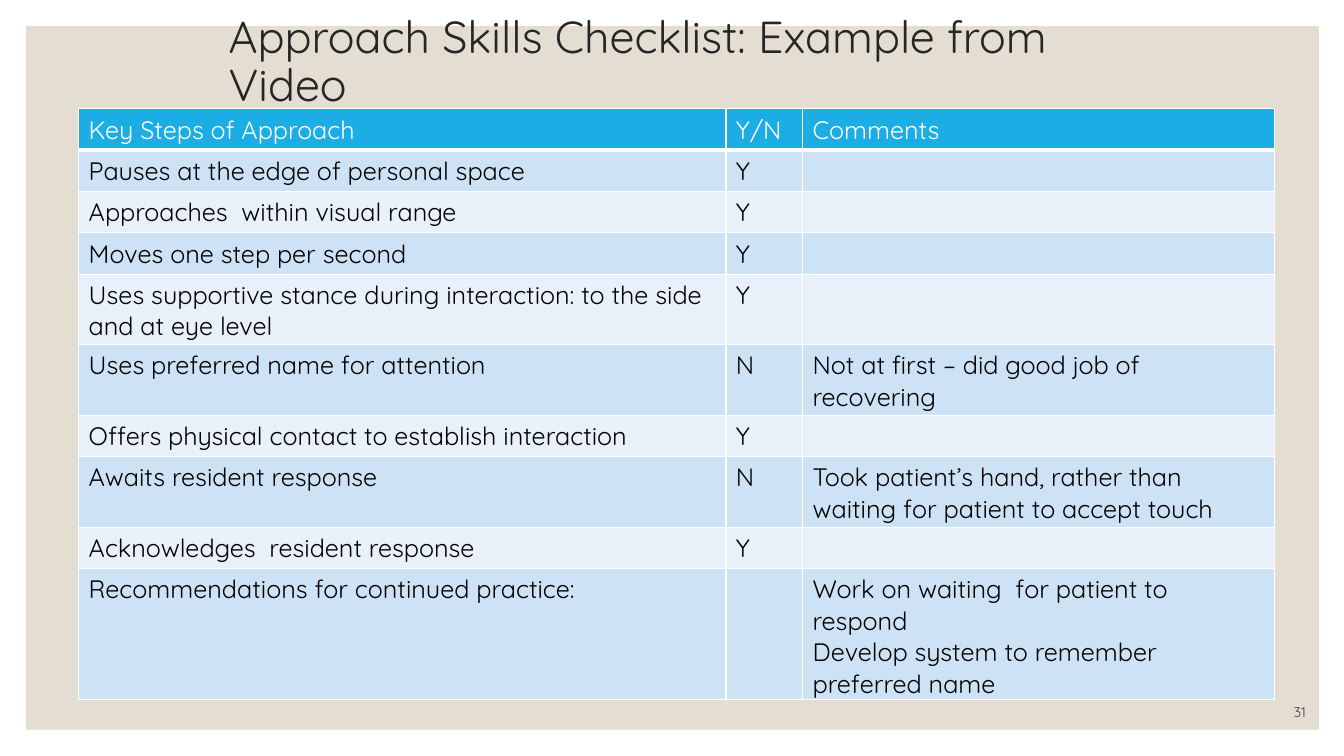
from dataclasses import dataclass

from lxml import etree
from pptx import Presentation
from pptx.dml.color import RGBColor
from pptx.enum.shapes import MSO_SHAPE
from pptx.enum.text import MSO_ANCHOR, PP_ALIGN
from pptx.oxml.ns import qn
from pptx.util import Pt

RECTANGLE = MSO_SHAPE.RECTANGLE
MIDDLE, BOTTOM = MSO_ANCHOR.MIDDLE, MSO_ANCHOR.BOTTOM
LEFT, RIGHT = PP_ALIGN.LEFT, PP_ALIGN.RIGHT

TITLE = "Approach Skills Checklist: Example from Video"
PAGE_NUMBER = "31"
HEADER = ("Key Steps of Approach", "Y/N", ["Comments"])
STEPS = [
    ("Pauses at the edge of personal space", "Y", []),
    ("Approaches  within visual range", "Y", []),
    ("Moves one step per second", "Y", []),
    ("Uses supportive stance during interaction: to the side and at eye level", "Y", []),
    ("Uses preferred name for attention", "N", ["Not at first – did good job of recovering"]),
    ("Offers physical contact to establish interaction", "Y", []),
    ("Awaits resident response", "N",
     ["Took patient’s hand, rather than waiting for patient to accept touch"]),
    ("Acknowledges  resident response", "Y", []),
    ("Recommendations for continued practice:", "",
     ["Work on waiting  for patient to respond",
      "Develop system to remember preferred name"]),
]

EMU_PER_PX = 9144
SLIDE_SIZE = (1333, 750)
PANEL = (26, 26, 1282, 698)
TITLE_BOX = (217, 0, 900, 125)
NUMBER_BOX = (1145, 690, 160, 30)
TABLE_ORIGIN = (78, 108)
COLUMN_WIDTHS = (642, 76, 468)
ROW_HEIGHT = 41


@dataclass(frozen=True)
class Theme:
    font: str = "Quicksand"
    panel: str = "E3DED1"
    title: str = "262626"
    number: str = "404040"
    header: str = "1CADE4"
    header_text: str = "FFFFFF"
    body_text: str = "000000"
    bands: tuple = ("CDE3F5", "E8F1FA")
    border: str = "FFFFFF"
    title_size: int = 32
    table_size: int = 18
    number_size: int = 10
    thin: int = 1
    thick: int = 3


THEME = Theme()


def px(*lengths):
    return [length * EMU_PER_PX for length in lengths]


def add_run(paragraph, text, size, color):
    run = paragraph.add_run()
    run.text = text
    run.font.name = THEME.font
    run.font.size = Pt(size)
    run.font.color.rgb = RGBColor.from_string(color)


def add_text_box(slide, box, text, size, color, anchor, alignment, line_spacing):
    frame = slide.shapes.add_textbox(*px(*box)).text_frame
    frame.word_wrap = True
    frame.vertical_anchor = anchor
    paragraph = frame.paragraphs[0]
    paragraph.alignment = alignment
    paragraph.line_spacing = line_spacing
    add_run(paragraph, text, size, color)


def set_borders(cell, widths):
    properties = cell._tc.get_or_add_tcPr()
    for position, (side, width) in enumerate(widths.items()):
        line = etree.Element(qn(f"a:ln{side}"), w=str(Pt(width)))
        fill = etree.SubElement(line, qn("a:solidFill"))
        etree.SubElement(fill, qn("a:srgbClr"), val=THEME.border)
        properties.insert(position, line)


def fill_cell(cell, lines, row_index):
    is_header = row_index == 0
    background = THEME.header if is_header else THEME.bands[(row_index - 1) % 2]
    color = THEME.header_text if is_header else THEME.body_text
    cell.fill.solid()
    cell.fill.fore_color.rgb = RGBColor.from_string(background)
    set_borders(cell, {
        "L": THEME.thin,
        "R": THEME.thin,
        "T": THEME.thick if row_index == 1 else THEME.thin,
        "B": THEME.thick if is_header else THEME.thin,
    })
    frame = cell.text_frame
    for index, line in enumerate(lines):
        paragraph = frame.add_paragraph() if index else frame.paragraphs[0]
        add_run(paragraph, line, THEME.table_size, color)


def add_checklist(slide):
    rows = [HEADER, *STEPS]
    size = (sum(COLUMN_WIDTHS), ROW_HEIGHT * len(rows))
    table = slide.shapes.add_table(
        len(rows), len(COLUMN_WIDTHS), *px(*TABLE_ORIGIN, *size)).table
    for column, width in zip(table.columns, px(*COLUMN_WIDTHS)):
        column.width = width
    for row_index, (step, answer, comments) in enumerate(rows):
        for column_index, lines in enumerate(([step], [answer] if answer else [], comments)):
            fill_cell(table.cell(row_index, column_index), lines, row_index)


def main():
    presentation = Presentation()
    presentation.slide_width, presentation.slide_height = px(*SLIDE_SIZE)
    slide = presentation.slides.add_slide(presentation.slide_layouts[6])
    panel = slide.shapes.add_shape(RECTANGLE, *px(*PANEL))
    panel.shadow.inherit = False
    panel.fill.solid()
    panel.fill.fore_color.rgb = RGBColor.from_string(THEME.panel)
    panel.line.fill.background()
    add_text_box(slide, TITLE_BOX, TITLE, THEME.title_size, THEME.title, MIDDLE, LEFT, 0.9)
    add_text_box(slide, NUMBER_BOX, PAGE_NUMBER, THEME.number_size, THEME.number,
                 BOTTOM, RIGHT, 1.0)
    add_checklist(slide)
    presentation.save("out.pptx")


if __name__ == "__main__":
    main()
